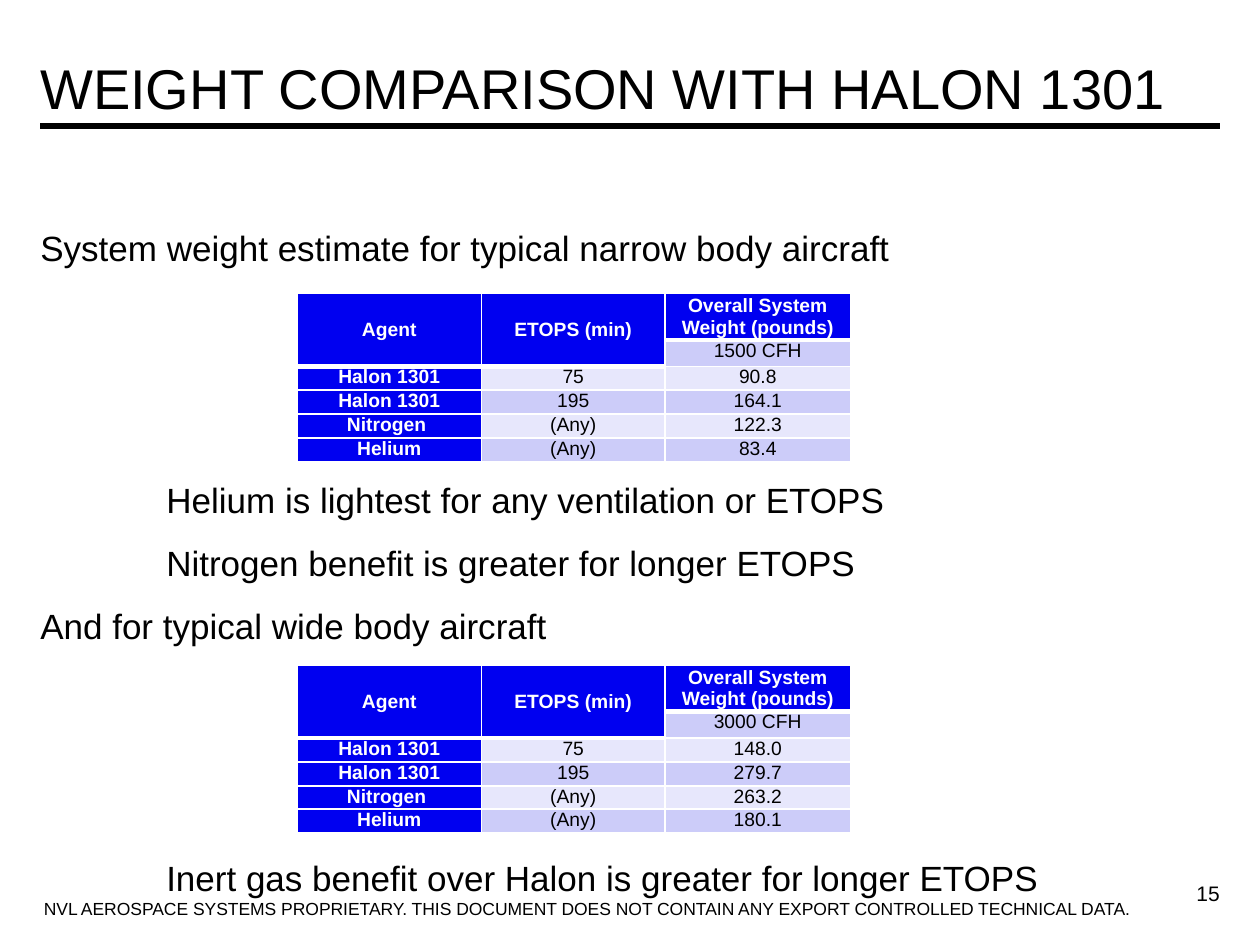
from lxml import etree
from pptx import Presentation
from pptx.dml.color import RGBColor
from pptx.enum import shapes, text
from pptx.oxml.ns import qn
from pptx.util import Inches, Pt

BLACK = RGBColor(0x00, 0x00, 0x00)
WHITE = RGBColor(0xFF, 0xFF, 0xFF)
BLUE = RGBColor(0x00, 0x00, 0xF0)
BAND_DARK = RGBColor(0xCC, 0xCC, 0xF9)
BAND_LIGHT = RGBColor(0xE7, 0xE7, 0xFC)

LEFT, WIDTH = 0.32, 9.36
MIDDLE = text.MSO_ANCHOR.MIDDLE

prs = Presentation()
prs.slide_width, prs.slide_height = Inches(10), Inches(7.5)
slide = prs.slides.add_slide(prs.slide_layouts[6])


def add_text(box, lines, size, inset, anchor=text.MSO_ANCHOR.TOP,
             align=text.PP_ALIGN.LEFT):
    """Each line is (wording, left indent in inches, points of space before)."""
    frame = slide.shapes.add_textbox(*map(Inches, box)).text_frame
    frame.word_wrap = True
    frame.vertical_anchor = anchor
    frame.margin_left = frame.margin_right = Inches(inset[0])
    frame.margin_top = frame.margin_bottom = Inches(inset[1])
    for i, (wording, indent, space) in enumerate(lines):
        paragraph = frame.paragraphs[0] if i == 0 else frame.add_paragraph()
        paragraph.alignment = align
        paragraph.space_before = Pt(space)
        if indent:
            paragraph._p.get_or_add_pPr().set("marL", str(Inches(indent)))
        run = paragraph.add_run()
        run.text = wording
        for name, value in {"size": Pt(size), "name": "Arial"}.items():
            setattr(run.font, name, value)
        run.font.color.rgb = BLACK


def style_cell(cell, fill, bottom=1):
    """Fill the cell and give it white borders, the bottom one in points."""
    for side, points in {"L": 1, "R": 1, "T": 1, "B": bottom}.items():
        border = etree.SubElement(cell._tc.get_or_add_tcPr(),
                                  qn(f"a:ln{side}"), w=str(Pt(points)))
        solid = etree.SubElement(border, qn("a:solidFill"))
        etree.SubElement(solid, qn("a:srgbClr"), val=str(WHITE))
    cell.fill.solid()
    cell.fill.fore_color.rgb = fill


# Title and rule
title_rule = slide.shapes.add_connector(
    shapes.MSO_CONNECTOR.STRAIGHT,
    Inches(LEFT), Inches(1), Inches(LEFT + WIDTH), Inches(1))
title_rule.line.color.rgb = BLACK
title_rule.line.width = Pt(4)
etree.SubElement(title_rule._element.spPr, qn("a:effectLst"))
add_text((LEFT, 0.38, WIDTH, 0.62),
         [("WEIGHT COMPARISON WITH HALON 1301", 0, 0)], 32, (0, 0.05), MIDDLE)

# Statements, leaving three 36 pt lines free for each table
LINE_GAP = 12
TABLE_GAP = LINE_GAP + 3 * 36
add_text((LEFT, 1.75, WIDTH, 5.05), [
    ("System weight estimate for typical narrow body aircraft", 0, 0),
    ("Helium is lightest for any ventilation or ETOPS", 1, TABLE_GAP),
    ("Nitrogen benefit is greater for longer ETOPS", 1, LINE_GAP),
    ("And for typical wide body aircraft", 0, LINE_GAP),
    ("Inert gas benefit over Halon is greater for longer ETOPS", 1, TABLE_GAP),
], 20, (0, 0.05))

add_text((8.83, 6.98, 0.85, 0.21), [("15", 0, 0)], 12, (0, 0), MIDDLE,
         text.PP_ALIGN.RIGHT)

# Weight tables: top, ventilation rate, overall weights, Nitrogen row height
agents = [("Halon 1301", "75"), ("Halon 1301", "195"),
          ("Nitrogen ", "(Any)"), ("Helium", "(Any)")]
aircraft = [
    (2.33, "1500 CFH", ("90.8", "164.1", "122.3", "83.4"), 0.19),
    (5.28, "3000 CFH", ("148.0", "279.7", "263.2", "180.1"), 0.17),
]
col_widths = (1.46, 1.46, 1.47)
for top, ventilation, weights, nitrogen_height in aircraft:
    row_heights = (0.31, 0.21, 0.19, 0.19, nitrogen_height, 0.19)
    rows = [("Agent", "ETOPS (min)", "Overall System Weight (pounds)"),
            ("", "", ventilation)]
    rows += [(*agent, weight) for agent, weight in zip(agents, weights)]
    table = slide.shapes.add_table(
        len(rows), len(col_widths), Inches(2.36), Inches(top),
        Inches(sum(col_widths)), Inches(sum(row_heights))).table
    for column, width in zip(table.columns, col_widths):
        column.width = Inches(width)
    for row, height in zip(table.rows, row_heights):
        row.height = Inches(height)
    for c in (0, 1):
        table.cell(0, c).merge(table.cell(1, c))

    for r, row in enumerate(rows):
        for c, wording in enumerate(row):
            cell = table.cell(r, c)
            merged_header = r < 2 and c < 2
            heading = r == 0 or c == 0 or merged_header
            band = BAND_DARK if r % 2 else BAND_LIGHT
            style_cell(cell, BLUE if heading else band,
                       3 if r == 0 or merged_header else 1)
            cell.margin_left = cell.margin_right = Inches(0.07)
            cell.margin_top = cell.margin_bottom = 0
            if r == 0:
                cell.vertical_anchor = MIDDLE
            paragraph = cell.text_frame.paragraphs[0]
            paragraph.alignment = text.PP_ALIGN.CENTER
            font_format = {"size": Pt(11), "name": "Arial", "bold": heading}
            for name, value in font_format.items():
                setattr(paragraph.font, name, value)
            if wording:
                run = paragraph.add_run()
                run.text = wording
                for name, value in font_format.items():
                    setattr(run.font, name, value)
                run.font.color.rgb = WHITE if heading else BLACK

add_text((0.25, 7.08, 9.5, 0.28),
         [("NVL AEROSPACE SYSTEMS PROPRIETARY. THIS DOCUMENT DOES NOT CONTAIN "
           "ANY EXPORT CONTROLLED TECHNICAL DATA.", 0, 0)], 10, (0.1, 0.05))

prs.save("out.pptx")
